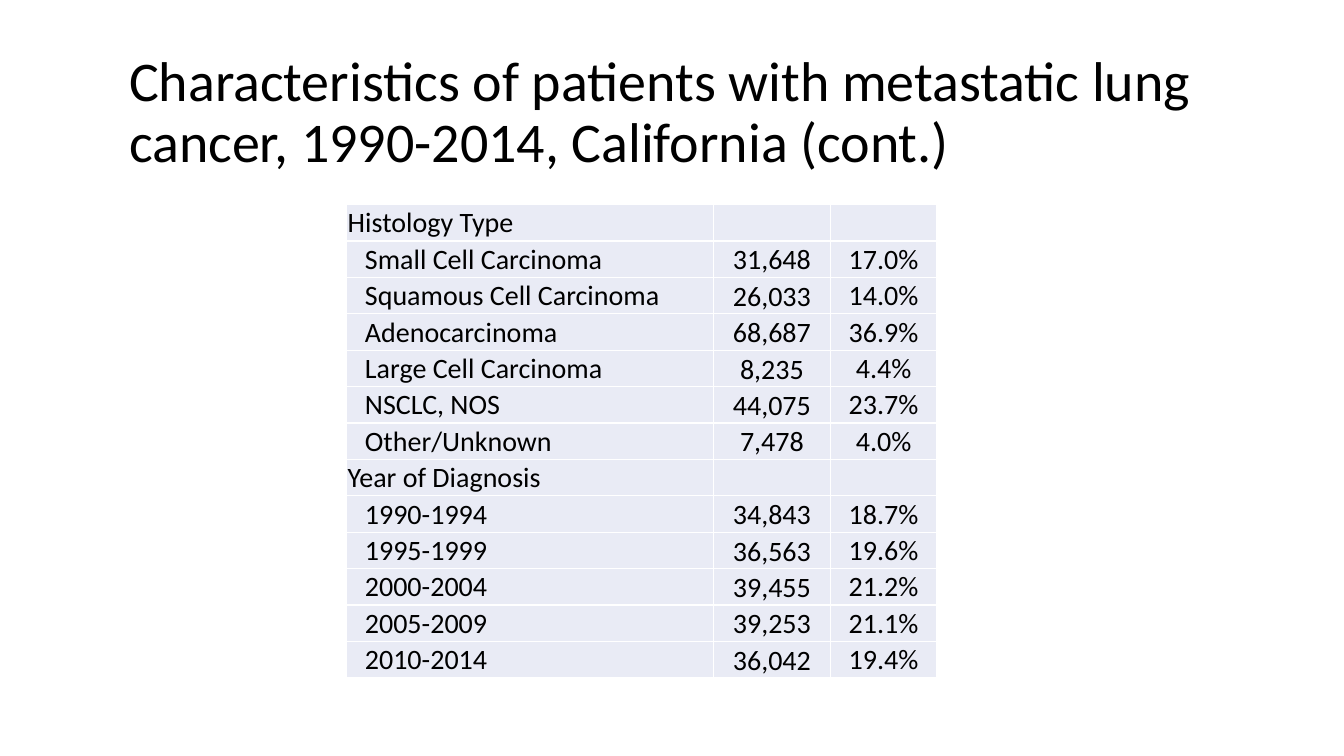
from lxml import etree
from pptx import Presentation
from pptx.dml.color import RGBColor
from pptx.enum.text import MSO_ANCHOR, MSO_AUTO_SIZE, PP_ALIGN
from pptx.oxml.ns import qn
from pptx.util import Pt

LEFT, CENTER = PP_ALIGN.LEFT, PP_ALIGN.CENTER
MIDDLE, BOTTOM = MSO_ANCHOR.MIDDLE, MSO_ANCHOR.BOTTOM
NO_AUTOFIT = MSO_AUTO_SIZE.NONE
TITLE_ONLY = 5

TITLE = "Characteristics of patients with metastatic lung cancer, 1990-2014, California (cont.)"
GROUPS = {
    "Histology Type": [
        ("Small Cell Carcinoma", "31,648", "17.0%"),
        ("Squamous Cell Carcinoma", "26,033", "14.0%"),
        ("Adenocarcinoma", "68,687", "36.9%"),
        ("Large Cell Carcinoma", "8,235", "4.4%"),
        ("NSCLC, NOS", "44,075", "23.7%"),
        ("Other/Unknown", "7,478", "4.0%"),
    ],
    "Year of Diagnosis": [
        ("1990-1994", "34,843", "18.7%"),
        ("1995-1999", "36,563", "19.6%"),
        ("2000-2004", "39,455", "21.2%"),
        ("2005-2009", "39,253", "21.1%"),
        ("2010-2014", "36,042", "19.4%"),
    ],
}
COLUMN_WIDTHS = (262, 83.5, 76)
COLUMN_ALIGNS = (LEFT, CENTER, CENTER)
COLUMN_ANCHORS = (MIDDLE, BOTTOM, MIDDLE)
CELL_MARGIN = 0.7
CATEGORY_INDENT = 13


def color(code):
    return RGBColor.from_string(code)


def write(frame, text, size=20, align=LEFT, spacing=None):
    para = frame.paragraphs[0]
    para.alignment = align
    para.line_spacing = spacing
    span = para.add_run()
    span.text = text
    span.font.size = Pt(size)
    span.font.name = "Calibri"
    span.font.color.rgb = color("000000")


def add_title(page, box):
    title = page.shapes.title
    title.left, title.top, title.width, title.height = map(Pt, box)
    frame = title.text_frame
    frame.word_wrap = True
    frame.auto_size = NO_AUTOFIT
    frame.vertical_anchor = MIDDLE
    write(frame, TITLE, size=40, spacing=0.9)


def set_borders(cell, code):
    properties = cell._tc.get_or_add_tcPr()
    for position, side in enumerate(("lnL", "lnR", "lnT", "lnB")):
        line = etree.Element(qn(f"a:{side}"), w=str(Pt(1)))
        fill = etree.SubElement(line, qn("a:solidFill"))
        etree.SubElement(fill, qn("a:srgbClr"), val=code)
        properties.insert(position, line)


def format_cell(cell, text, column, indent):
    cell.fill.solid()
    cell.fill.fore_color.rgb = color("E9EBF5")
    set_borders(cell, "FFFFFF")
    cell.margin_left = Pt(indent)
    cell.margin_top = cell.margin_right = Pt(CELL_MARGIN)
    cell.margin_bottom = 0
    cell.vertical_anchor = COLUMN_ANCHORS[column]
    if text:
        write(cell.text_frame, text, align=COLUMN_ALIGNS[column])


def add_characteristics(page, box):
    rows = []
    for heading, categories in GROUPS.items():
        rows += [(heading, "", ""), *categories]
    shape = page.shapes.add_table(len(rows), len(COLUMN_WIDTHS), *map(Pt, box))
    table = shape.table
    table.first_row = table.horz_banding = False
    for column, width in zip(table.columns, COLUMN_WIDTHS):
        column.width = Pt(width)
    for row_index, texts in enumerate(rows):
        table.rows[row_index].height = Pt(box[3] / len(rows))
        for column, text in enumerate(texts):
            is_category = column == 0 and texts[0] not in GROUPS
            indent = CATEGORY_INDENT if is_category else CELL_MARGIN
            format_cell(table.cell(row_index, column), text, column, indent)


def main():
    deck = Presentation()
    deck.slide_width, deck.slide_height = Pt(960), Pt(540)
    page = deck.slides.add_slide(deck.slide_layouts[TITLE_ONLY])
    add_title(page, (85, 29, 828, 104.4))
    add_characteristics(page, (247.7, 146.2, sum(COLUMN_WIDTHS), 338))
    deck.save("out.pptx")


if __name__ == "__main__":
    main()
